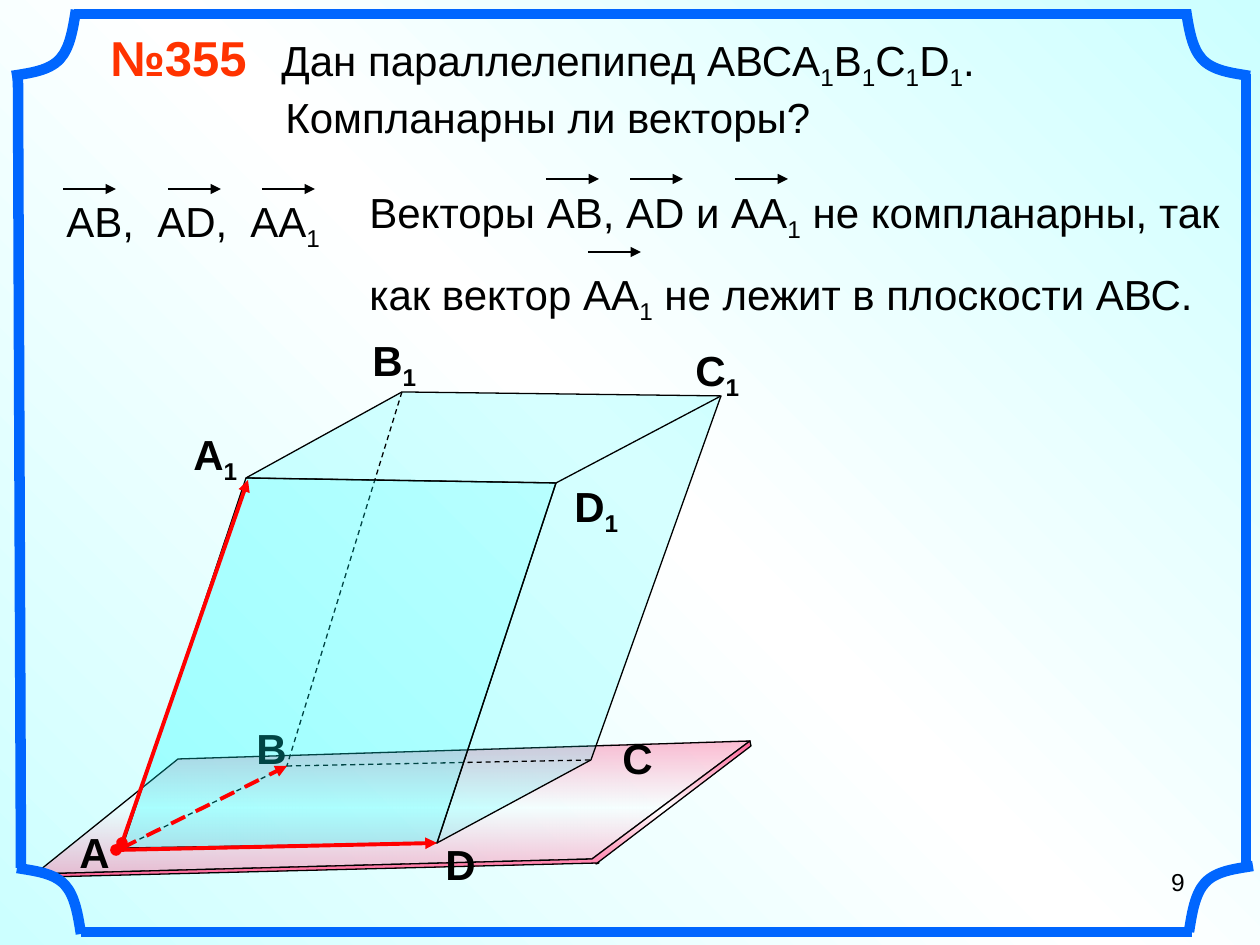
from dataclasses import dataclass

from lxml import etree
from pptx import Presentation
from pptx import util as u
from pptx.dml.color import RGBColor
from pptx.enum import dml, text
from pptx.oxml import parse_xml
from pptx.oxml.ns import nsdecls, qn

PX = 914400 / 126  # EMU in one px
WIDTH, HEIGHT = 1260, 945
Point = tuple[int, int]


@dataclass(frozen=True)
class Theme:
    face: str = "Arial"
    ink: str = "000000"
    accent: str = "FF3300"
    frame: str = "0066FF"
    vector: str = "FF0000"
    glass: str = "00FFFF"
    white: str = "FFFFFF"
    pink: str = "FF6699"
    pale: str = "CCFFFF"
    body: int = 24
    number: int = 28
    page: int = 14
    thin: float = 0.75
    bold_line: float = 2.25
    frame_line: float = 6


THEME = Theme()


@dataclass(frozen=True)
class Span:
    """Text in which every second part between bars is a subscript."""
    words: str
    size: int = THEME.body
    color: str = THEME.ink
    bold: bool = False


@dataclass(frozen=True)
class Para:
    spans: tuple[Span, ...]
    tabs: tuple[int, ...] = ()
    format: tuple[tuple[str, object], ...] = ()


@dataclass(frozen=True)
class Stroke:
    color: str = THEME.ink
    width: float = THEME.thin
    dashed: bool = False
    start: str = ""
    end: str = ""


THIN = Stroke()
DASHED = Stroke(dashed=True)
ARROW = Stroke(end="triangle")
FRAME = Stroke(THEME.frame, THEME.frame_line)


def emu(px: float) -> int:
    return round(px * PX)


def set_all(target: object, values: dict[str, object]) -> None:
    for name, value in values.items():
        setattr(target, name, value)


# Fills and strokes
def gradient(stops: list[tuple[int, str, int]], direction: str):
    marks = "".join(
        f'<a:gs pos="{place * 1000}"><a:srgbClr val="{color}">'
        f'<a:alpha val="{opacity * 1000}"/></a:srgbClr></a:gs>'
        for place, color, opacity in stops)
    return parse_xml(f'<a:gradFill {nsdecls("a")} rotWithShape="1">'
                     f'<a:gsLst>{marks}</a:gsLst>{direction}</a:gradFill>')


def pink_gradient(inner: int, outer: int):
    center = ('<a:path path="rect"><a:fillToRect l="50000" t="50000" '
              'r="50000" b="50000"/></a:path>')
    return gradient([(0, THEME.white, inner), (100, THEME.pink, outer)], center)


def glass(opacity: int):
    return parse_xml(f'<a:solidFill {nsdecls("a")}><a:srgbClr val="{THEME.glass}">'
                     f'<a:alpha val="{opacity * 1000}"/></a:srgbClr></a:solidFill>')


def replace_fill(owner, fill) -> None:
    owner.replace(owner.find(qn("a:solidFill")), fill)


def apply_stroke(line, stroke: Stroke) -> None:
    line.width = u.Pt(stroke.width)
    line.color.rgb = RGBColor.from_string(stroke.color)
    if stroke.dashed:
        line.dash_style = dml.MSO_LINE.DASH
    for tag, head in (("a:headEnd", stroke.start), ("a:tailEnd", stroke.end)):
        if head:
            etree.SubElement(line._get_or_add_ln(), qn(tag), type=head)


# Drawing
def draw_line(page, start: Point, end: Point, stroke: Stroke = THIN) -> None:
    line = page.shapes.add_connector(1, *map(emu, start + end))
    apply_stroke(line.line, stroke)
    etree.SubElement(line._element.spPr, qn("a:effectLst"))


def draw_outline(page, points: list[Point], stroke: Stroke = THIN, fill=None):
    builder = page.shapes.build_freeform(*points[0], scale=PX)
    builder.add_line_segments(points[1:], close=fill is not None)
    shape = builder.convert_to_shape()
    shape.shadow.inherit = False
    if fill is None:
        shape.fill.background()
    else:
        shape.fill.solid()
        replace_fill(shape._element.spPr, fill)
    apply_stroke(shape.line, stroke)
    return shape


def draw_curve(page, points: list[Point], stroke: Stroke) -> None:
    """Draw Bezier arcs: a start, then two controls and an end for each."""
    shape = draw_outline(page, points, stroke)
    steps = list(shape._element.iter(qn("a:lnTo")))
    for first in range(0, len(steps), 3):
        arc = etree.Element(qn("a:cubicBezTo"))
        steps[first].addprevious(arc)
        for step in steps[first:first + 3]:
            arc.append(step[0])
            step.getparent().remove(step)


def draw_text(page, left: int, top: int, width: int, height: int,
              paras: list[Para], wrap: bool = True) -> None:
    box = page.shapes.add_textbox(*map(emu, (left, top, width, height)))
    frame = box.text_frame
    set_all(frame, {"word_wrap": wrap,
                    "auto_size": text.MSO_AUTO_SIZE.SHAPE_TO_FIT_TEXT})
    for index, para in enumerate(paras):
        target = frame.add_paragraph() if index else frame.paragraphs[0]
        if para.tabs:
            stops = etree.SubElement(target._p.get_or_add_pPr(), qn("a:tabLst"))
            for tab in para.tabs:
                etree.SubElement(stops, qn("a:tab"), pos=str(emu(tab)), algn="l")
        set_all(target, dict(para.format))
        for span in para.spans:
            for order, words in enumerate(span.words.split("|")):
                run = target.add_run()
                run.text = words
                set_all(run.font, {"name": THEME.face, "size": u.Pt(span.size),
                                   "bold": span.bold})
                run.font.color.rgb = RGBColor.from_string(span.color)
                if order % 2:
                    run._r.get_or_add_rPr().set("baseline", "-25000")


def draw_frame(page) -> None:
    for start, end in (((74, 14), (1191, 14)), ((81, 932), (1192, 932)),
                       ((1246, 74), (1246, 868)), ((18, 74), (21, 868))):
        draw_line(page, start, end, FRAME)
    corner = [(0, 0), (3, 19), (6, 38), (16, 49), (27, 61), (46, 63), (64, 66)]
    for x, y, across, down in ((76, 10, -1, 1), (1186, 10, 1, 1),
                               (81, 934, -1, -1), (1189, 932, 1, -1)):
        draw_curve(page, [(x + across * dx, y + down * dy) for dx, dy in corner], FRAME)


def draw_solid(page) -> None:
    a, b, c, d = (122, 848), (287, 766), (591, 760), (437, 843)
    a1, b1, c1, d1 = (246, 478), (402, 392), (721, 396), (556, 483)
    # Base plane and its edge
    west, north, east, south = (35, 874), (178, 759), (750, 741), (592, 859)
    draw_outline(page, [north, east, south, west], fill=pink_gradient(41, 44))
    draw_outline(page, [west, (47, 877), (599, 863), (596, 864), (751, 746), east, south],
                 fill=pink_gradient(100, 100))
    # Faces, edges and vertex names
    draw_outline(page, [d1, d, c, c1, b1, a1], fill=glass(16))
    draw_line(page, c1, d1)
    draw_outline(page, [b1, b, a], DASHED)
    draw_line(page, b, c, DASHED)
    for name, left, top in (("В", 244, 716), ("А", 67, 820), ("D", 433, 832),
                            ("С", 610, 726), ("В|1", 360, 328), ("С|1", 683, 338),
                            ("D|1", 562, 474), ("А|1", 181, 422)):
        draw_text(page, left, top, 72 if "|" in name else 55, 63,
                  [Para((Span(name, bold=True),))], wrap=False)
    draw_outline(page, [d, a, a1, d1], fill=glass(27))
    # Vectors from A
    for start, end, dashed, dot in (((116, 850), d, False, "oval"), (a, b, True, ""),
                                    ((122, 843), (248, 480), False, "oval")):
        draw_line(page, start, end,
                  Stroke(THEME.vector, THEME.bold_line, dashed, dot, "triangle"))


def main() -> None:
    deck = Presentation()
    deck.slide_width, deck.slide_height = emu(WIDTH), emu(HEIGHT)
    page = deck.slides.add_slide(deck.slide_layouts[6])
    page.background.fill.solid()
    replace_fill(page._element.find(".//" + qn("p:bgPr")), gradient(
        [(0, THEME.pale, 100), (50, THEME.white, 100), (100, THEME.pale, 100)],
        '<a:lin ang="18900000" scaled="1"/>'))

    draw_solid(page)
    draw_frame(page)

    # Task
    draw_text(page, 63, 21, 1176, 122, [
        Para((Span("\t"), Span("№355", THEME.number, THEME.accent, True),
              Span("\tДан параллелепипед АВСA|1|B|1|C|1|D|1|.")), (35, 206)),
        Para((Span("\tКомпланарны ли векторы?"),), (210,))])
    draw_text(page, 42, 189, 325, 63,
              [Para((Span("\tАВ,\tАD,\tАА|1"),), (12, 103, 196))])

    # Answer
    draw_text(page, 357, 180, 892, 139, [
        Para((Span("Векторы АВ, АD и АА|1| не компланарны, так"),)),
        Para((Span("как вектор АА|1| не лежит в плоскости АВС."),),
             format=(("space_before", u.Pt(14)),))])

    # Arrows over the vector names
    for y, starts in ((189, (63, 168, 262)), (179, (546, 630, 735)), (252, (588,))):
        for x in starts:
            draw_line(page, (x, y), (x + 53, y), ARROW)

    # Page number
    draw_text(page, 903, 861, 294, 66, [
        Para((Span("9", THEME.page),), format=(("alignment", text.PP_ALIGN.RIGHT),))])
    deck.save("out.pptx")


if __name__ == "__main__":
    main()
